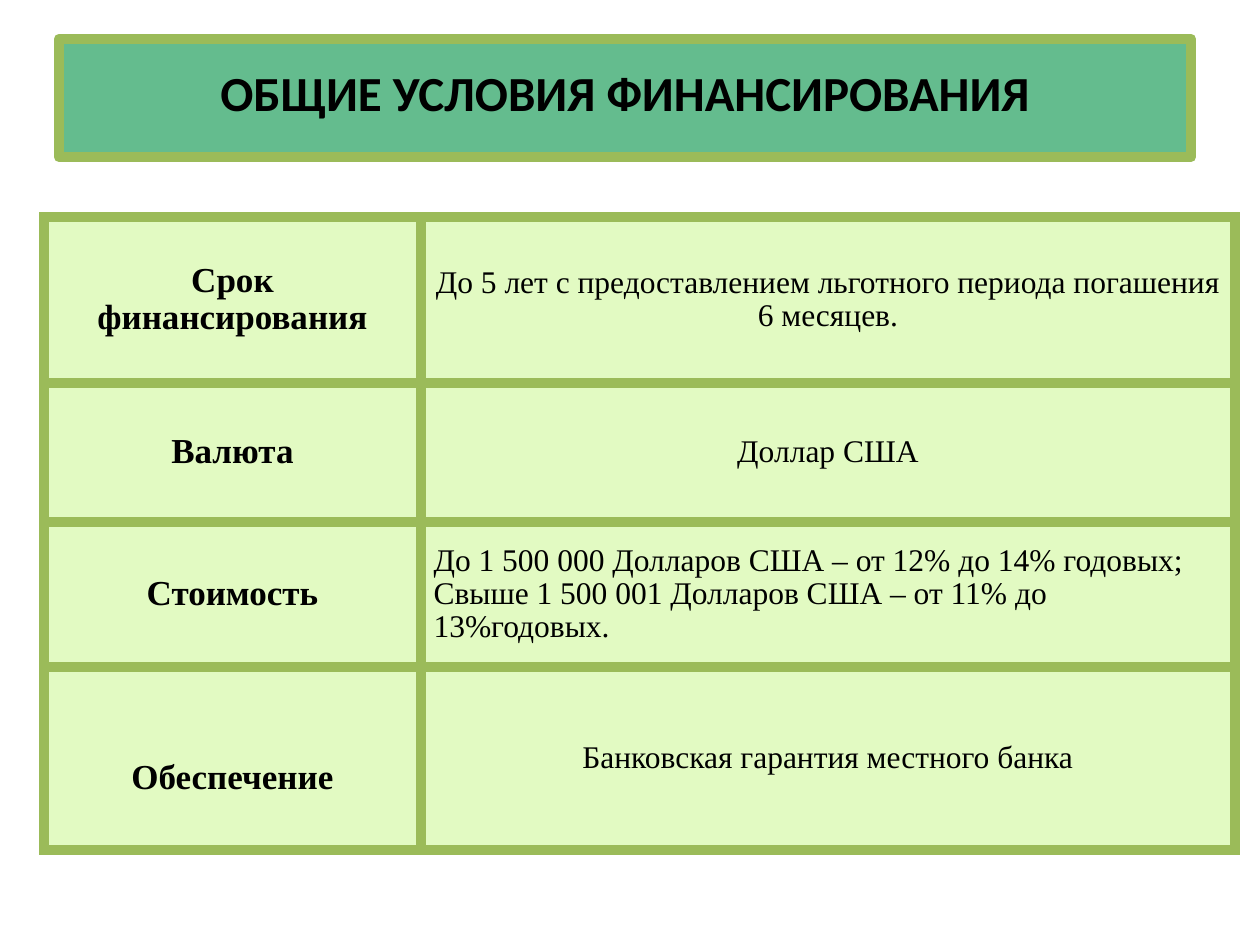
from lxml import etree
from pptx import Presentation
from pptx import util as u
from pptx.dml.color import RGBColor
from pptx.enum import shapes, text
from pptx.oxml.ns import qn

TITLE = "ОБЩИЕ УСЛОВИЯ ФИНАНСИРОВАНИЯ"
ROWS = [
    ("Срок финансирования",
     ["До 5 лет с предоставлением льготного периода погашения 6 месяцев."]),
    ("Валюта", ["Доллар США"]),
    ("Стоимость",
     ["До 1 500 000 Долларов США – от 12% до 14% годовых;",
      "Свыше 1 500 001 Долларов США – от 11% до 13%годовых."]),
    ("Обеспечение", ["Банковская гарантия местного банка"]),
]
COLS = [377, 814]
HIGH = [166, 139, 145, 183]
COLOR = {"edge": "9BBB59", "title": "64BC8E", "cell": "E2FAC2", "text": "000000"}
EDGE = u.Pt(6)


def px(n):
    return u.Emu(round(n * 914400 / 126))


def rgb(name):
    return RGBColor.from_string(COLOR[name])


def style(par, font, size, bold, align):
    par.alignment = align
    par.font.name = font
    par.font.size = u.Pt(size)
    par.font.bold = bold
    par.font.color.rgb = rgb("text")


def border(cell):
    props = cell._tc.get_or_add_tcPr()
    for i, side in enumerate(("lnL", "lnR", "lnT", "lnB")):
        line = etree.Element(qn("a:" + side), w=str(EDGE))
        fill = etree.SubElement(line, qn("a:solidFill"))
        etree.SubElement(fill, qn("a:srgbClr"), val=COLOR["edge"])
        props.insert(i, line)


def write(cell, lines, size, bold):
    cell.fill.solid()
    cell.fill.fore_color.rgb = rgb("cell")
    border(cell)
    cell.vertical_anchor = text.MSO_ANCHOR.MIDDLE
    cell.text = "\n".join(lines)
    align = text.PP_ALIGN.LEFT if len(lines) > 1 else text.PP_ALIGN.CENTER
    for par in cell.text_frame.paragraphs:
        style(par, "Times New Roman", size, bold, align)
        par.line_spacing = 0.96


def main():
    prs = Presentation()
    prs.slide_width, prs.slide_height = px(1260), px(945)
    slide = prs.slides.add_slide(prs.slide_layouts[6])

    table = slide.shapes.add_table(len(ROWS), len(COLS), px(44), px(217),
                                   px(sum(COLS)), px(sum(HIGH))).table
    for col, wide in zip(table.columns, COLS):
        col.width = px(wide)
    for r, (name, terms) in enumerate(ROWS):
        table.rows[r].height = px(HIGH[r])
        write(table.cell(r, 0), [name], 20, True)
        write(table.cell(r, 1), terms, 18, False)
    table.cell(len(ROWS) - 1, 0).margin_top = px(46)

    title = slide.shapes.add_shape(shapes.MSO_SHAPE.RECTANGLE,
                                   px(59), px(39), px(1132), px(118))
    title.shadow.inherit = False
    title.fill.solid()
    title.fill.fore_color.rgb = rgb("title")
    title.line.color.rgb = rgb("edge")
    title.line.width = EDGE
    frame = title.text_frame
    frame.word_wrap = True
    frame.vertical_anchor = text.MSO_ANCHOR.MIDDLE
    frame.margin_bottom = px(18)
    frame.text = TITLE
    style(frame.paragraphs[0], "Calibri", 28, True, text.PP_ALIGN.CENTER)

    prs.save("out.pptx")


if __name__ == "__main__":
    main()
